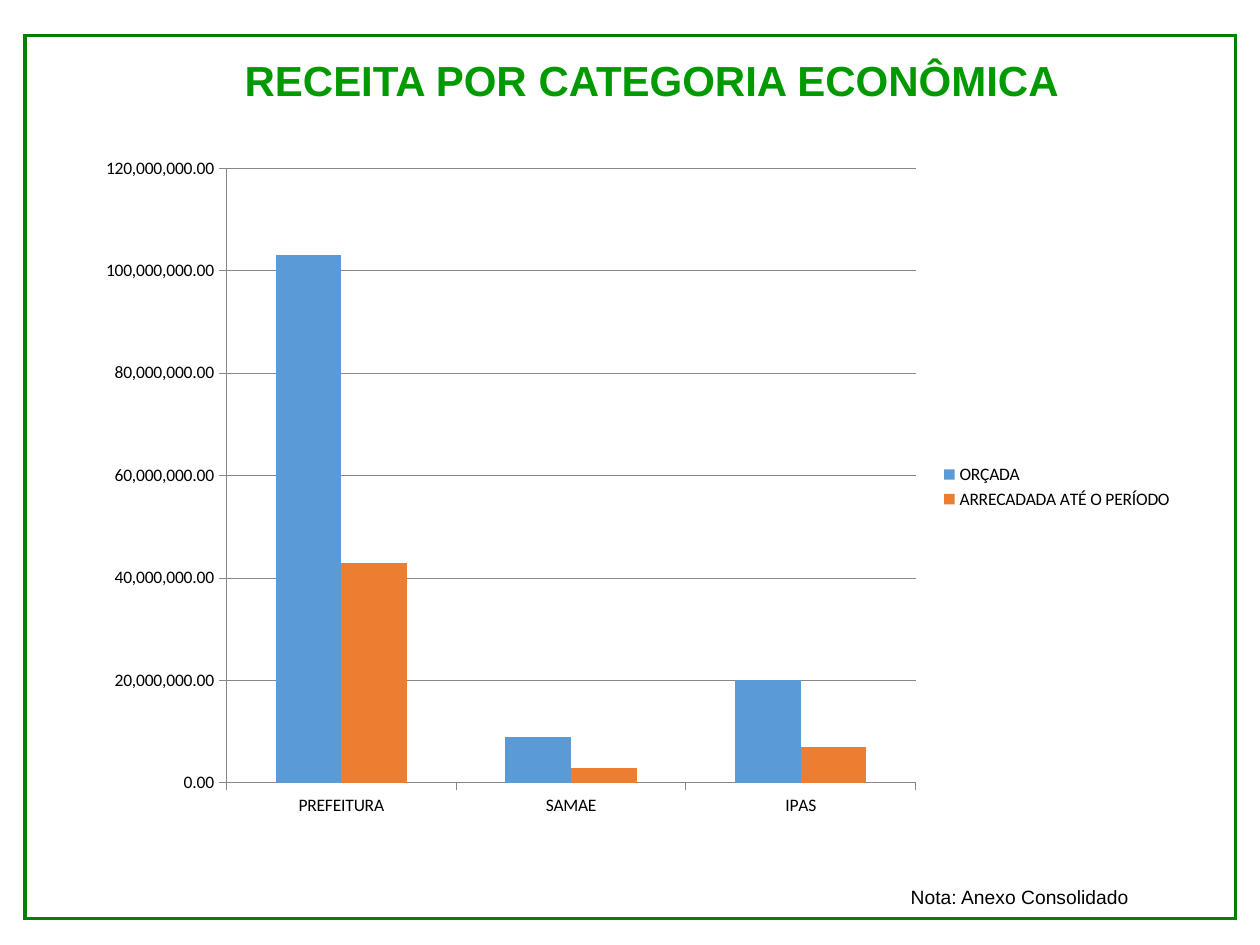
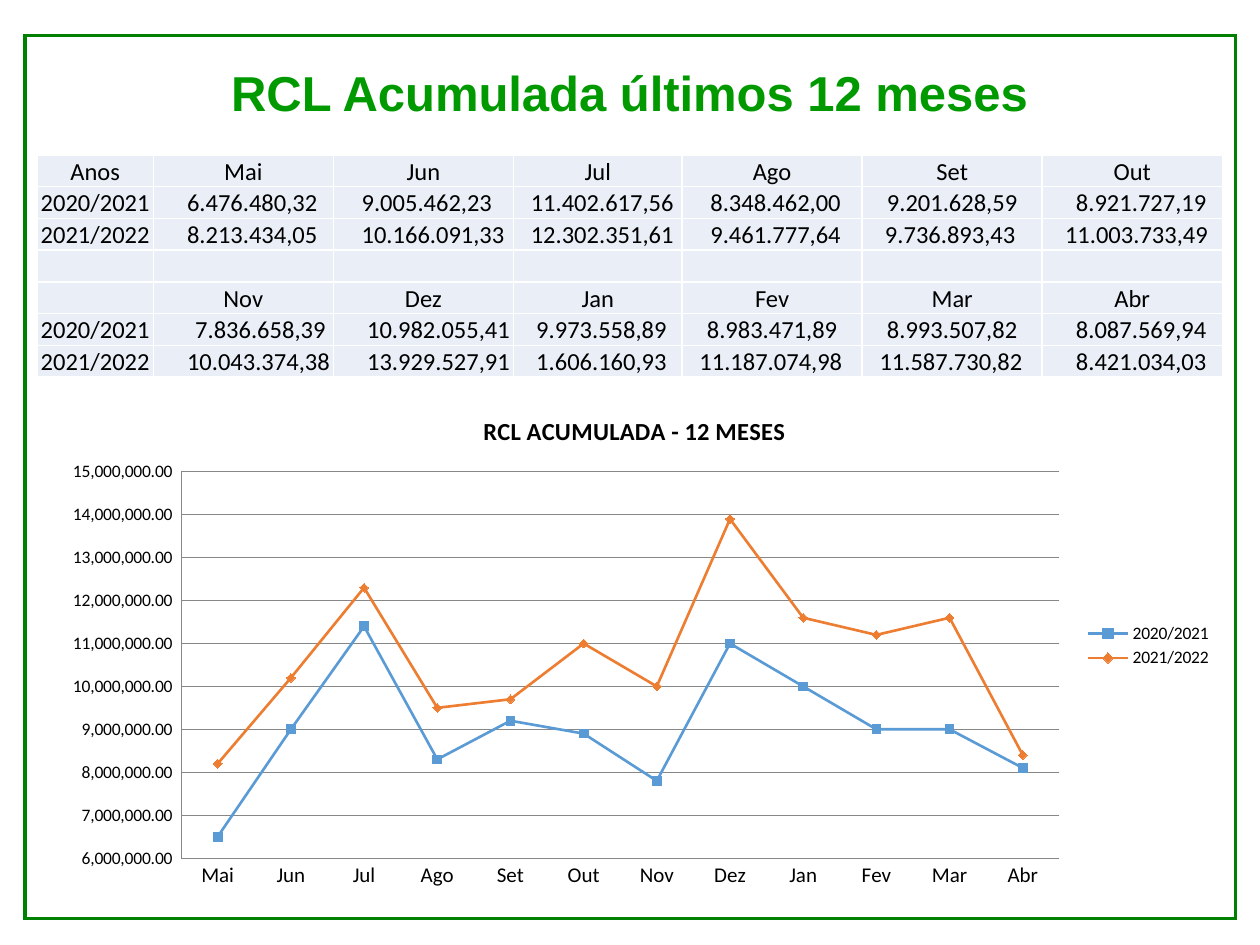
import pptx
import pptx.chart.data
import pptx.dml.color
import pptx.enum.chart
import pptx.enum.shapes
import pptx.enum.text
import pptx.oxml
import pptx.oxml.ns
import pptx.util
from lxml import etree

Cm = pptx.util.Cm
Pt = pptx.util.Pt
RGBColor = pptx.dml.color.RGBColor
ALIGN = pptx.enum.text.PP_ALIGN
ANCHOR = pptx.enum.text.MSO_ANCHOR
CHART_TYPE = pptx.enum.chart.XL_CHART_TYPE
MARKER = pptx.enum.chart.XL_MARKER_STYLE
TICK = pptx.enum.chart.XL_TICK_MARK
qn = pptx.oxml.ns.qn

BLACK = RGBColor(0x00, 0x00, 0x00)
TITLE_GREEN = RGBColor(0x00, 0x99, 0x00)
FRAME_GREEN = RGBColor(0x00, 0x80, 0x00)
CELL_BLUE = RGBColor(0xEA, 0xEF, 0xF7)
GRID_GRAY = RGBColor(0x87, 0x87, 0x87)
SERIES_COLORS = [RGBColor(0x5B, 0x9B, 0xD5), RGBColor(0xED, 0x7D, 0x31)]
MARKERS = [MARKER.SQUARE, MARKER.DIAMOND]

# Revenue by entity: budgeted and collected
ENTITIES = ["PREFEITURA", "SAMAE", "IPAS"]
REVENUE = {
    "ORÇADA ": [103000000, 9000000, 20000000],
    "ARRECADADA ATÉ O PERÍODO": [43000000, 3000000, 7000000],
}

# Net revenue by month
MONTHS = ["Mai", "Jun", "Jul", "Ago", "Set", "Out",
          "Nov", "Dez", "Jan", "Fev", "Mar", "Abr"]
NET_REVENUE = {
    "2020/2021": ["6.476.480,32", "9.005.462,23", "11.402.617,56",
                  "8.348.462,00", "9.201.628,59", "8.921.727,19",
                  "7.836.658,39", "10.982.055,41", "9.973.558,89",
                  "8.983.471,89", "8.993.507,82", "8.087.569,94"],
    "2021/2022": ["8.213.434,05", "10.166.091,33", "12.302.351,61",
                  "9.461.777,64", "9.736.893,43", "11.003.733,49",
                  "10.043.374,38", "13.929.527,91", "1.606.160,93",
                  "11.187.074,98", "11.587.730,82", "8.421.034,03"],
}
# Indent steps of each figure; 0 means centred
INDENTS = {
    "2020/2021": [6, 5, 3, 5, 0, 6, 7.5, 6, 4, 0, 0, 6],
    "2021/2022": [6, 5, 3, 5, 4, 4, 6, 6, 4, 3, 3, 6],
}
INDENT_STEP = 0.11


class Report:
    """Holds the deck, the current slide and the shared style."""

    def __init__(self):
        self.deck = pptx.Presentation()
        self.deck.slide_width = Cm(25.4)
        self.deck.slide_height = Cm(19.05)
        self.page = None

    def add_page(self):
        self.page = self.deck.slides.add_slide(self.deck.slide_layouts[6])
        frame = self.page.shapes.add_shape(
            pptx.enum.shapes.MSO_SHAPE.RECTANGLE,
            Cm(0.5), Cm(0.72), Cm(24.41), Cm(17.8))
        frame.shadow.inherit = False
        frame.fill.background()
        frame.line.color.rgb = FRAME_GREEN
        frame.line.width = Pt(2)
        # Sharp corners
        etree.SubElement(frame.line._ln, qn("a:miter"), lim="800000")

    def style(self, font, size, name="Arial", color=BLACK, bold=False):
        font.name, font.size, font.bold = name, Pt(size), bold
        font.color.rgb = color

    def add_text(self, text, left, top, width, height, size, **look):
        box = self.page.shapes.add_textbox(
            Cm(left), Cm(top), Cm(width), Cm(height))
        box.text_frame.word_wrap = True
        box.text_frame.text = text
        para = box.text_frame.paragraphs[0]
        self.style(para.runs[0].font, size, **look)
        return box.text_frame

    def add_title(self, text, left, top, width, height, size):
        frame = self.add_text(text, left, top, width, height, size,
                              color=TITLE_GREEN, bold=True)
        frame.vertical_anchor = ANCHOR.MIDDLE
        frame.paragraphs[0].alignment = ALIGN.CENTER
        frame.paragraphs[0].line_spacing = 0.9

    def add_table(self, rows, left, top, widths, row_height):
        """Each row is a list of (text, indent steps)."""
        table = self.page.shapes.add_table(
            len(rows), len(widths), Cm(left), Cm(top),
            Cm(sum(widths)), Cm(row_height * len(rows))).table
        table.first_row = table.horz_banding = False
        for column, width in zip(table.columns, widths):
            column.width = Cm(width)
        for row_index, row in enumerate(rows):
            table.rows[row_index].height = Cm(row_height)
            for column_index, (text, indent) in enumerate(row):
                self.fill_cell(table.cell(row_index, column_index),
                               text, indent)

    def fill_cell(self, cell, text, indent):
        self.add_borders(cell)
        cell.fill.solid()
        cell.fill.fore_color.rgb = CELL_BLUE
        cell.vertical_anchor = ANCHOR.BOTTOM
        cell.margin_left = Cm(0.02 + indent * INDENT_STEP)
        cell.margin_top = Cm(0.02)
        cell.margin_right = Cm(0.02)
        cell.margin_bottom = 0
        cell.text_frame.text = text
        para = cell.text_frame.paragraphs[0]
        para.alignment = ALIGN.LEFT if indent else ALIGN.CENTER
        for span in para.runs:
            self.style(span.font, 14, "Calibri")
        if not text:
            etree.SubElement(para._p, qn("a:endParaRPr"), sz="1400")

    def add_borders(self, cell):
        properties = cell._tc.get_or_add_tcPr()
        for side in ("lnL", "lnR", "lnT", "lnB"):
            line = etree.SubElement(properties, qn("a:" + side), w="12700")
            fill = etree.SubElement(line, qn("a:solidFill"))
            etree.SubElement(fill, qn("a:srgbClr"), val="FFFFFF")

    def add_chart(self, kind, categories, series, place, plot_place,
                  tick, number_format, title=None):
        data = pptx.chart.data.CategoryChartData()
        data.categories = categories
        for name, values in series.items():
            data.add_series(name, values)
        chart = self.page.shapes.add_chart(
            kind, *[Cm(length) for length in place], data).chart
        self.style(chart.font, 10, "Calibri")

        # Title and legend
        chart.has_title = title is not None
        if title:
            chart.chart_title.text_frame.text = title
            span = chart.chart_title.text_frame.paragraphs[0].runs[0]
            self.style(span.font, 14, "Calibri", bold=True)
            chart.chart_title.include_in_layout = False
        chart.has_legend = True
        chart.legend.position = pptx.enum.chart.XL_LEGEND_POSITION.RIGHT
        chart.legend.include_in_layout = False

        # Axes
        value_axis = chart.value_axis
        for axis in (chart.category_axis, value_axis):
            axis.major_tick_mark = tick
            axis.minor_tick_mark = TICK.NONE
            self.draw_gray(axis.format.line)
        value_axis.has_major_gridlines = True
        self.draw_gray(value_axis.major_gridlines.format.line)
        value_axis.tick_labels.number_format = number_format
        value_axis.tick_labels.number_format_is_linked = False
        chart.plots[0].vary_by_categories = False
        self.place_plot(chart, plot_place)
        return chart

    def draw_gray(self, line):
        line.color.rgb = GRID_GRAY
        line.width = Pt(0.5)

    def place_plot(self, chart, plot_place):
        """Fix the inner plot area, in percent of the chart."""
        area = chart._chartSpace.find(".//" + qn("c:plotArea"))
        for old in area.findall(qn("c:layout")):
            area.remove(old)
        layout = etree.Element(qn("c:layout"))
        manual = etree.SubElement(layout, qn("c:manualLayout"))
        settings = [("layoutTarget", "inner"), ("xMode", "edge"),
                    ("yMode", "edge")]
        settings += [(tag, percent / 100)
                     for tag, percent in zip("xywh", plot_place)]
        for tag, value in settings:
            etree.SubElement(manual, qn("c:" + tag), val=str(value))
        area.insert(0, layout)

    def add_columns(self, *arguments, **options):
        chart = self.add_chart(CHART_TYPE.COLUMN_CLUSTERED,
                               *arguments, **options)
        plot = chart.plots[0]
        plot.gap_width, plot.overlap = 150, 0
        for series, color in zip(plot.series, SERIES_COLORS):
            series.format.fill.solid()
            series.format.fill.fore_color.rgb = color

    def add_lines(self, *arguments, low, high, step, **options):
        chart = self.add_chart(CHART_TYPE.LINE_MARKERS,
                               *arguments, **options)
        axis = chart.value_axis
        axis.minimum_scale, axis.maximum_scale = low, high
        axis.major_unit = step
        self.style(chart.category_axis.tick_labels.font, 12, "Calibri")
        for series, color, marker in zip(chart.plots[0].series,
                                         SERIES_COLORS, MARKERS):
            series.smooth = False
            series.format.line.color.rgb = color
            series.format.line.width = Pt(1.5)
            series.marker.style = marker
            series.marker.size = 5
            series.marker.format.fill.solid()
            series.marker.format.fill.fore_color.rgb = color
            series.marker.format.line.color.rgb = color


def half_year_rows(corner, start):
    """Month names and one row of figures per period, for six months."""
    half = slice(start, start + 6)
    rows = [[(corner, 0)] + [(month, 0) for month in MONTHS[half]]]
    for period, figures in NET_REVENUE.items():
        rows.append([(period, 0),
                     *zip(figures[half], INDENTS[period][half])])
    return rows


def to_rounded(figure):
    """Read a figure without its cents, to the nearest hundred thousand."""
    return round(int(figure.split(",")[0].replace(".", "")), -5)


def main():
    report = Report()

    # Revenue by economic category
    report.add_page()
    report.add_title("RECEITA POR CATEGORIA ECONÔMICA",
                     2.19, 0.51, 21.9, 2.31, 24)
    report.add_text("Nota: Anexo Consolidado", 18.11, 17.73, 6.6, 0.74, 11)
    report.add_columns(ENTITIES, REVENUE, (1.7, 2.92, 22.2, 13.79),
                       (12.9, 3.4, 62.6, 89.9), TICK.OUTSIDE, "#,##0.00")

    # Net revenue over twelve months
    report.add_page()
    report.add_title("RCL Acumulada últimos 12 meses",
                     1.26, 0.73, 22.86, 2.39, 28)
    rows = half_year_rows("Anos", 0) + [[("", 0)] * 7] + half_year_rows("", 6)
    report.add_table(rows, 0.75, 3.12,
                     [2.34, 3.63, 3.63, 3.4, 3.63, 3.63, 3.63], 0.64)

    trend = {period: [to_rounded(figure) for figure in figures]
             for period, figures in NET_REVENUE.items()}
    # The chart plots January 2022 apart from the table figure
    trend["2021/2022"][MONTHS.index("Jan")] = 11600000
    report.add_lines(MONTHS, trend, (0.89, 7.91, 23.8, 10.21),
                     (11.6, 15.7, 74.4, 76.3), TICK.NONE,
                     r'_-* #,##0.00_-;\-* #,##0.00_-;_-* "-"??_',
                     title="RCL ACUMULADA - 12 MESES",
                     low=6000000, high=15000000, step=1000000)

    report.deck.save("out.pptx")


if __name__ == "__main__":
    main()
